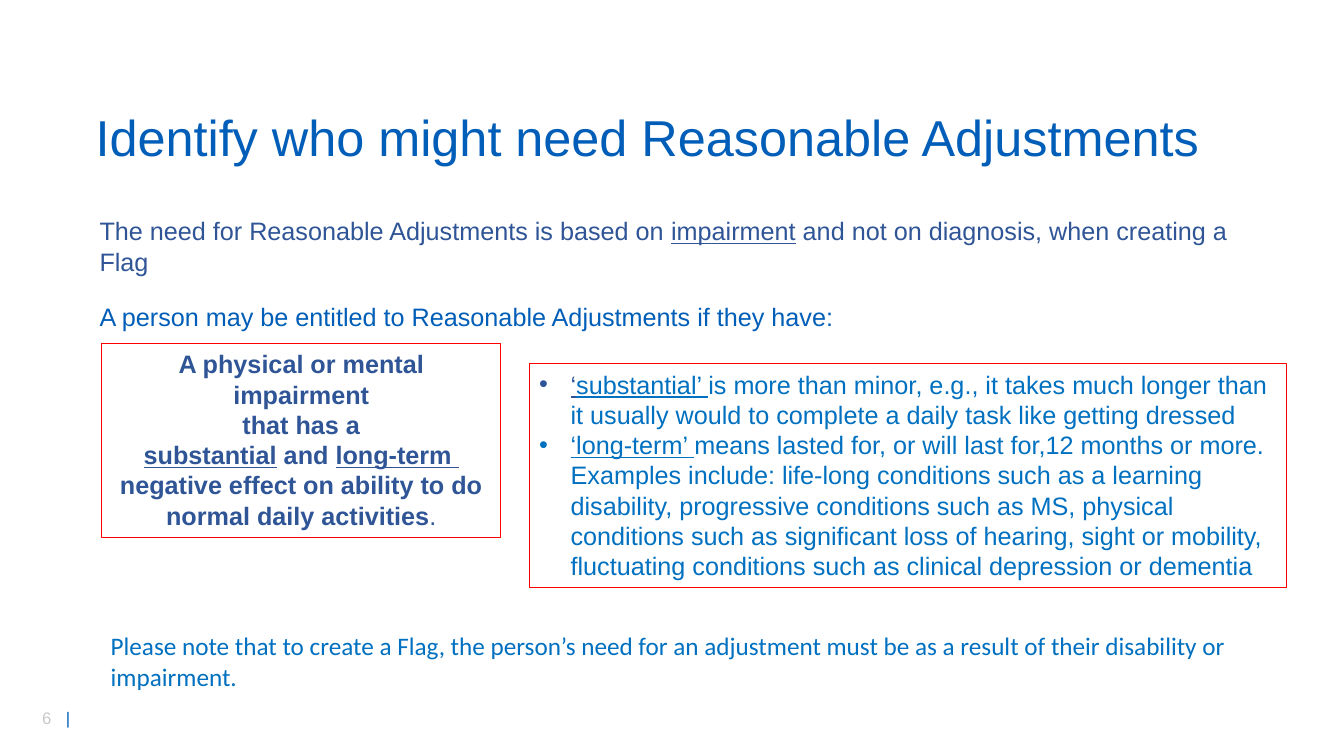
"""Build the slide on who might need Reasonable Adjustments."""
from pptx import Presentation
from pptx.dml.color import RGBColor
from pptx.enum.shapes import MSO_SHAPE as Shape
from pptx.enum.text import MSO_ANCHOR as Anchor, PP_ALIGN as Align
from pptx.oxml.ns import qn
from pptx.util import Pt
from lxml.etree import SubElement

BLUE = RGBColor(0x00, 0x5E, 0xB8)
NAVY = RGBColor(0x2F, 0x55, 0x97)
SKY = RGBColor(0x00, 0x70, 0xC0)
GREY = RGBColor(0xC9, 0xC9, 0xC9)
RED = RGBColor(0xFF, 0x00, 0x00)

# Each paragraph is a list of runs: text, colour, then style letters (b bold, u underline).
TITLE = [[("Identify who might need Reasonable Adjustments", BLUE, "")]]
INTRO = [[
    ("The need for Reasonable Adjustments is based on ", NAVY, ""),
    ("impairment", NAVY, "u"),
    (" and not on diagnosis, when creating a Flag", NAVY, ""),
]]
LEAD = [[("A person may be entitled to Reasonable Adjustments if they have:", BLUE, "")]]
TEST = [
    [("A physical or mental impairment", NAVY, "b")],
    [("that has a", NAVY, "b")],
    [("substantial", NAVY, "bu"), (" and ", NAVY, "b"), ("long-term ", NAVY, "bu")],
    [("negative effect on ability to do normal daily activities", NAVY, "b"), (".", NAVY, "")],
]
TERMS = [
    [
        ("‘", NAVY, "u"),
        ("substantial’ ", SKY, "u"),
        ("is more than minor, e.g., it takes much longer than it usually would "
         "to complete a daily task like getting dressed", SKY, ""),
    ],
    [
        ("‘long-term’ ", SKY, "u"),
        ("means lasted for, or will last for,12 months or more. Examples include: "
         "life-long conditions such as a learning disability, progressive conditions "
         "such as MS, physical conditions such as significant loss of hearing, sight "
         "or mobility, fluctuating conditions such as clinical depression or dementia", SKY, ""),
    ],
]
NOTE = [[("Please note that to create a Flag, the person’s need for an adjustment must be "
          "as a result of their disability or impairment.", SKY, "")]]
NUMBER = [[("6\t", GREY, ""), ("|", BLUE, "")]]


def write(shape, paras, size=18, font="Arial", align=Align.LEFT, gap=None):
    frame = shape.text_frame
    frame.word_wrap = True
    frame.vertical_anchor = Anchor.TOP
    for i, runs in enumerate(paras):
        para = frame.add_paragraph() if i else frame.paragraphs[0]
        para.alignment = align
        if gap:
            para.line_spacing = gap
        for text, colour, style in runs:
            run = para.add_run()
            run.text = text
            run.font.name = font
            run.font.size = Pt(size)
            run.font.color.rgb = colour
            run.font.bold = "b" in style
            run.font.underline = "u" in style
    return frame


def label(box, paras, **look):
    return write(slide.shapes.add_textbox(*map(Pt, box)), paras, **look)


def panel(box, paras, **look):
    shape = slide.shapes.add_shape(Shape.RECTANGLE, *map(Pt, box))
    shape.shadow.inherit = False
    shape.fill.background()
    shape.line.color.rgb = RED
    shape.line.width = Pt(0.75)
    return write(shape, paras, **look)


def bullet(para, indent):
    props = para._p.get_or_add_pPr()
    props.set("marL", str(Pt(indent)))
    props.set("indent", str(-Pt(indent)))
    SubElement(props, qn("a:buFont")).set("typeface", "Arial")
    SubElement(props, qn("a:buChar")).set("char", "•")


def tab(para, place):
    stops = SubElement(para._p.get_or_add_pPr(), qn("a:tabLst"))
    stop = SubElement(stops, qn("a:tab"))
    stop.set("pos", str(Pt(place)))
    stop.set("algn", "l")


deck = Presentation()
deck.slide_width, deck.slide_height = Pt(960), Pt(540)
slide = deck.slides.add_slide(deck.slide_layouts[6])

number = label((23, 502, 51, 21.6), NUMBER, size=12)
tab(number.paragraphs[0], 17)
title = label((61.2, 76.3, 838, 48.2), TITLE, size=36, gap=0.9)
title.vertical_anchor = Anchor.MIDDLE
label((64, 150.5, 832, 51), INTRO)
label((64, 213.8, 838, 48.2), LEAD, gap=0.9)
panel((72.7, 245.5, 285, 138.2), TEST, align=Align.CENTER)
terms = panel((378, 260, 540.7, 160), TERMS)
for para in terms.paragraphs:
    bullet(para, 22.5)
label((72, 447, 822, 51), NOTE, font="Calibri")

deck.save("out.pptx")
